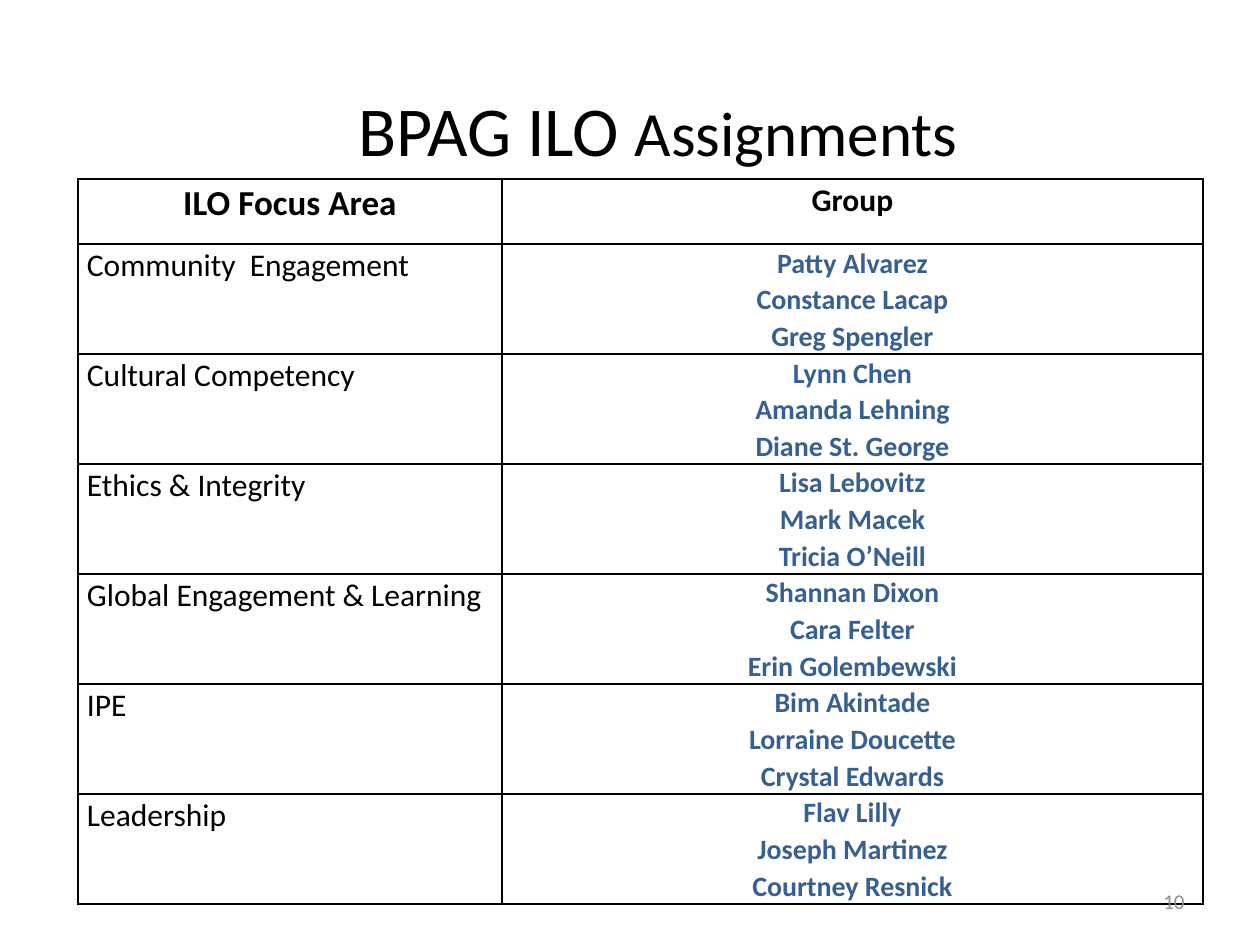
from pptx import Presentation
from pptx.dml.color import RGBColor
from pptx.enum.text import MSO_ANCHOR as Anchor, PP_ALIGN as Align
from pptx.oxml import parse_xml
from pptx.oxml.ns import nsdecls
from pptx.util import Emu, Pt

EMU_PER_PX = 914400 / 126

TITLE = [("BPAG ILO ", 40), ("Assignments", 36)]
HEADERS = [("ILO Focus Area", 20), ("Group", 18)]
GROUPS = {
    "Community  Engagement": ["Patty Alvarez", "Constance Lacap", "Greg Spengler"],
    "Cultural Competency": ["Lynn Chen", "Amanda Lehning", "Diane St. George"],
    "Ethics & Integrity": ["Lisa Lebovitz", "Mark Macek", "Tricia O’Neill"],
    "Global Engagement & Learning": ["Shannan Dixon", "Cara Felter", "Erin Golembewski"],
    "IPE": ["Bim Akintade", "Lorraine Doucette", "Crystal Edwards"],
    "Leadership": ["Flav Lilly", "Joseph Martinez", "Courtney Resnick"],
}


def px(length):
    return Emu(round(length * EMU_PER_PX))


def color(value):
    return RGBColor.from_string(value)


def set_formats(target, formats):
    for name, value in formats.items():
        setattr(target, name, value)


class SlideBuilder:
    font = "Calibri"
    black, white, blue, gray = "000000", "FFFFFF", "376092", "8C8C8C"
    cell_format = dict(margin_left=px(9), margin_right=px(9),
                       margin_top=0, margin_bottom=0, vertical_anchor=Anchor.TOP)

    def __init__(self, slide):
        self.slide = slide

    def fill_paragraph(self, paragraph, runs, ink, bold=False, **formats):
        set_formats(paragraph, formats)
        for text, size in runs:
            run = paragraph.add_run()
            run.text = text
            set_formats(run.font, dict(name=self.font, size=Pt(size), bold=bold))
            run.font.color.rgb = color(ink)

    def text(self, box, runs, ink, align):
        frame = self.slide.shapes.add_textbox(*map(px, box)).text_frame
        set_formats(frame, dict(word_wrap=True, vertical_anchor=Anchor.MIDDLE))
        self.fill_paragraph(frame.paragraphs[0], runs, ink, alignment=align)

    def table(self, left, top, widths, heights):
        table = self.slide.shapes.add_table(
            len(heights), len(widths), px(left), px(top),
            px(sum(widths)), px(sum(heights))).table
        set_formats(table, dict(first_row=False, horz_banding=False))
        for column, width in zip(table.columns, widths):
            column.width = px(width)
        for row, height in zip(table.rows, heights):
            row.height = px(height)
        return table

    def cell(self, cell, lines, ink, bold=False, align=Align.LEFT):
        set_formats(cell, self.cell_format)
        properties = cell._tc.get_or_add_tcPr()
        for side in "LRTB":
            properties.append(parse_xml(
                f'<a:ln{side} {nsdecls("a")} w="{Pt(1)}"><a:solidFill>'
                f'<a:srgbClr val="{self.black}"/></a:solidFill></a:ln{side}>'))
        cell.fill.solid()
        cell.fill.fore_color.rgb = color(self.white)
        frame = cell.text_frame
        for index, line in enumerate(lines):
            paragraph = frame.add_paragraph() if index else frame.paragraphs[0]
            self.fill_paragraph(paragraph, [line], ink, bold,
                                alignment=align, line_spacing=1.07)


def main():
    presentation = Presentation()
    set_formats(presentation, dict(slide_width=px(1260), slide_height=px(945)))
    builder = SlideBuilder(presentation.slides.add_slide(presentation.slide_layouts[6]))

    # Title
    builder.text((91, 49, 1134, 158), TITLE, builder.black, Align.CENTER)

    # Assignments table
    table = builder.table(78, 179, (424, 701), [65] + [110] * len(GROUPS))
    for column, header in enumerate(HEADERS):
        builder.cell(table.cell(0, column), [header], builder.black, True, Align.CENTER)
    for row, (area, members) in enumerate(GROUPS.items(), start=1):
        builder.cell(table.cell(row, 0), [(area, 18)], builder.black)
        builder.cell(table.cell(row, 1), [(name, 16) for name in members],
                     builder.blue, True, Align.CENTER)

    # Page number
    builder.text((903, 876, 294, 50), [("10", 12)], builder.gray, Align.RIGHT)

    presentation.save("out.pptx")


if __name__ == "__main__":
    main()
